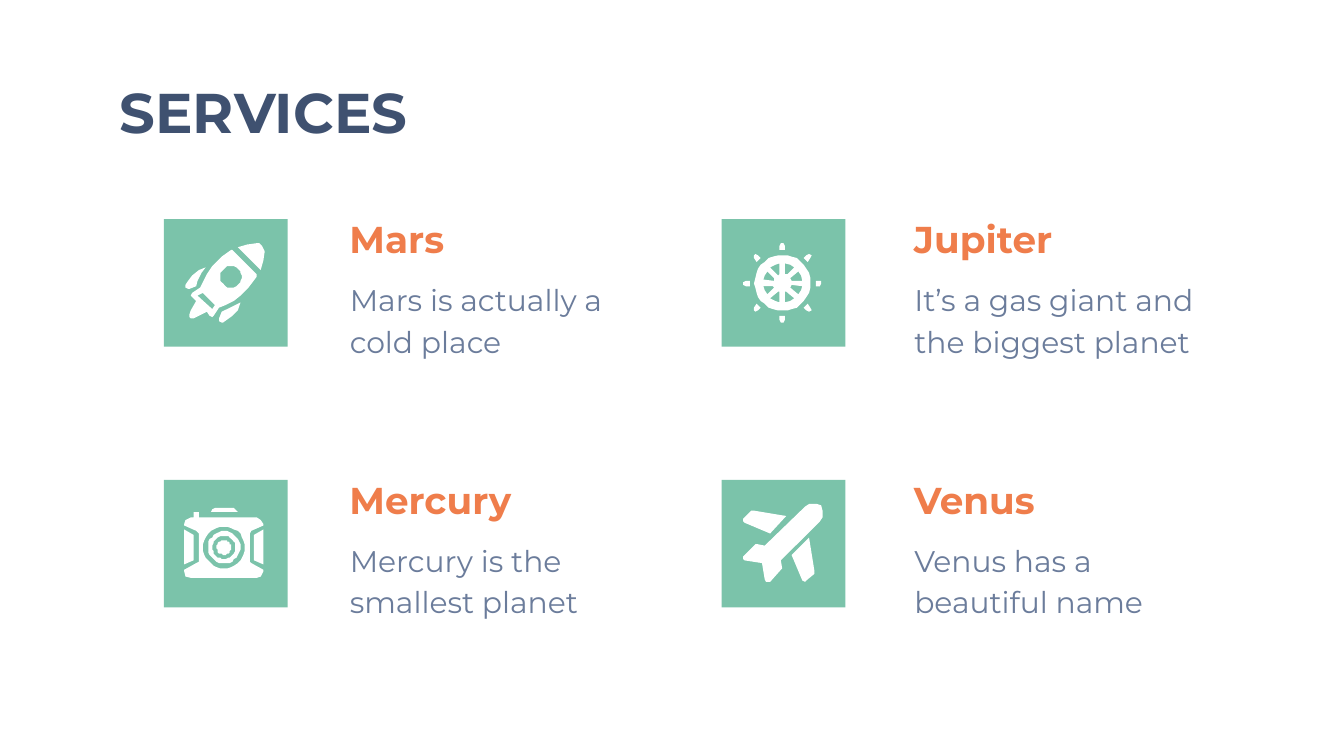
from math import cos, radians, sin

from lxml import etree
from pptx import Presentation
from pptx import util as u
from pptx.dml.color import RGBColor
from pptx.enum import shapes, text
from pptx.oxml.ns import qn

Pt = u.Pt
UNIT = 0.72  # icon outlines are drawn in hundredths of an inch


def color(value):
    return RGBColor.from_string(value)


def turn(outline, degrees, center):
    """Turn an outline around (0, 0), then move it to center."""
    c, s = cos(radians(degrees)), sin(radians(degrees))
    return [(center[0] + x * c - y * s, center[1] + x * s + y * c) for x, y in outline]


def circle(center, radius):
    return [turn([(radius, 0)], angle, center)[0] for angle in range(0, 360, 10)]


class ServicesSlide:
    FONT = "Montserrat"
    NAVY, ORANGE, SLATE = "3F5170", "EF7D4B", "6B7C9B"
    GREEN, WHITE = "7BC3AA", "FFFFFF"

    def __init__(self, slide):
        self.slide = slide

    def set_text(self, box, words, at, size, ink, bold=False, spacing=1.0, after=0):
        box.left, box.top, box.width, box.height = (Pt(v) for v in at)
        frame = box.text_frame
        frame.word_wrap = True
        frame.auto_size = text.MSO_AUTO_SIZE.NONE
        frame.vertical_anchor = text.MSO_ANCHOR.TOP
        frame.margin_left = frame.margin_right = Pt(7.2)
        frame.margin_top = frame.margin_bottom = Pt(7.2)
        frame.text = words
        line = frame.paragraphs[0]
        properties = line._p.get_or_add_pPr()
        properties.set("marL", "0")
        properties.set("indent", "0")
        etree.SubElement(properties, qn("a:buNone"))
        line.alignment = text.PP_ALIGN.LEFT
        line.line_spacing = spacing
        line.space_before, line.space_after = Pt(0), Pt(after)
        font = line.font
        font.name, font.size, font.bold = self.FONT, Pt(size), bold
        font.color.rgb = color(ink)

    def title(self, words, at):
        self.set_text(self.slide.shapes.title, words, at, 30, self.NAVY, bold=True)

    def heading(self, placeholder, words, x, y):
        self.set_text(placeholder, words, (x, y, 180, 36), 20, self.ORANGE, True, 1.15, 16)

    def description(self, words, x, y):
        box = self.slide.shapes.add_textbox(0, 0, 0, 0)
        self.set_text(box, words, (x, y, 180, 72), 16, self.SLATE, False, 1.15, 16)

    def paint(self, shape, fill):
        shape.shadow.inherit = False
        shape.fill.solid()
        shape.fill.fore_color.rgb = color(fill)
        shape.line.fill.background()

    def tile(self, x, y):
        tile = self.slide.shapes.add_shape(
            shapes.MSO_SHAPE.RECTANGLE, Pt(x), Pt(y), Pt(66.24), Pt(68.4))
        self.paint(tile, self.GREEN)

    def icon(self, parts, x, y):
        """Draw parts as one group; each part is an outline followed by its holes."""
        group = self.slide.shapes.add_group_shape()
        for outline, *holes in parts:
            builder = group.shapes.build_freeform(*outline[0], scale=Pt(UNIT))
            builder.add_line_segments(outline[1:])
            for hole in holes:
                builder.move_to(*hole[0])
                builder.add_line_segments(hole[1:])
            self.paint(builder.convert_to_shape(Pt(x), Pt(y)), self.WHITE)


# Icon outlines, measured from the corner of their tile
rocket = [
    [[(51, 23), (50, 23), (43, 28), (36, 35), (32, 41), (29, 47), (27, 51), (21, 55),
      (20, 57), (21, 58), (24, 61), (20, 68), (19, 71), (19, 73), (20, 74), (22, 74),
      (26, 72.5), (32, 69), (34, 72), (36, 73), (37, 72), (41, 66), (46, 64), (52, 61),
      (57, 57), (63, 51), (69, 43), (69, 41), (52, 24)],
     circle((49.7, 43), 8),
     [(29, 55), (38, 64), (36, 67), (25, 57)]],
    [[(69, 18), (62, 19), (55, 21), (72, 38), (74.5, 31), (75, 24), (73, 20), (71, 18.5)]],
    [[(57, 62), (47, 67), (43, 69), (41, 74), (41, 76), (43, 77), (44, 77),
      (51, 72), (55, 67.5)]],
    [[(31, 36), (26, 38), (21, 42), (18, 45.5), (16, 49), (16, 51), (18, 52),
      (19, 52), (24, 50), (25, 46), (28, 40)]],
]

hub = (45.2, 47.5)
opening = [(-2, -14.5), (-2, -6.8), (-3.2, -6), (-8.7, -11.7), (-5.5, -13.5)]
handle = [(-2, -24.5), (-2, -27.5), (-1, -29.3), (1, -29.3), (2, -27.5), (2, -24.5)]
eighths = range(0, 360, 45)
wheel = [[circle(hub, 20.8)] + [turn(opening, angle, hub) for angle in eighths]]
wheel += [[turn(handle, angle, hub)] for angle in eighths]

lens = (44.7, 50.3)
camera = [
    [[(15, 37), (15, 63), (22, 60), (22, 41)]],
    [[(74, 37), (74, 63), (67, 60), (67, 41)]],
    [[(24, 24), (22.5, 24.5), (22, 26), (22, 28), (20, 28), (16.5, 29.5), (15, 33),
      (15, 34), (24, 38), (25.5, 40), (25.5, 61), (24, 62.5), (15, 67), (15, 68),
      (16.5, 71.5), (20, 73), (69, 73), (72.5, 71.5), (74, 68), (74, 67), (65, 62.5),
      (64, 61), (64, 40), (65, 38), (74, 34), (74, 33), (72.5, 29.5), (69, 28),
      (26, 28), (26, 26), (25.5, 24.5)],
     circle(lens, 15.5)],
    [circle(lens, 12), circle(lens, 8.7)],
    [circle(lens, 5.5)],
    [[(38, 21), (36, 22), (35, 24), (55, 24), (53, 22), (52, 21)]],
]

plane = [
    [[(68, 18), (65, 18.5), (62, 20), (32, 49), (27, 48), (25, 48), (16, 57), (16, 59),
      (17, 60), (30, 62), (32, 74), (33, 75.5), (34, 76), (36, 76), (44, 67), (45, 66),
      (44, 60), (73, 31), (75, 28), (75, 23), (74, 19), (71, 18)]],
    [[(23, 23), (22, 23), (16, 29), (16, 31), (17, 32), (36, 40), (48, 27), (24, 23)]],
    [[(65, 43), (52, 56), (60, 75), (62, 76), (63, 75), (69, 70), (69, 68)]],
]

# Each service: name, description, icon, column, row
services = [
    ("Mars", "Mars is actually a cold place", rocket, 0, 0),
    ("Jupiter", "It’s a gas giant and the biggest planet", wheel, 1, 0),
    ("Mercury", "Mercury is the smallest planet", camera, 0, 1),
    ("Venus", "Venus has a beautiful name", plane, 1, 1),
]
TILE_X, TEXT_X, TILE_Y = (87.84, 386.64), (180, 482.4), (117.36, 257.04)


def main():
    deck = Presentation()
    deck.slide_width, deck.slide_height = Pt(720), Pt(405)
    slide = deck.slides.add_slide(deck.slide_layouts.get_by_name("Comparison"))
    page = ServicesSlide(slide)

    # Title
    page.title("SERVICES", (56.88, 34.56, 283.68, 45.36))

    # Grid of services
    headings = list(slide.placeholders)[1:]
    for heading, (name, about, icon, column, row) in zip(headings, services):
        x, y = TEXT_X[column], TILE_Y[row] - 12.24
        page.heading(heading, name, x, y)
        page.description(about, x + 0.36, y + 36)
        page.tile(TILE_X[column], TILE_Y[row])
        page.icon(icon, TILE_X[column], TILE_Y[row])

    deck.save("out.pptx")


if __name__ == "__main__":
    main()
